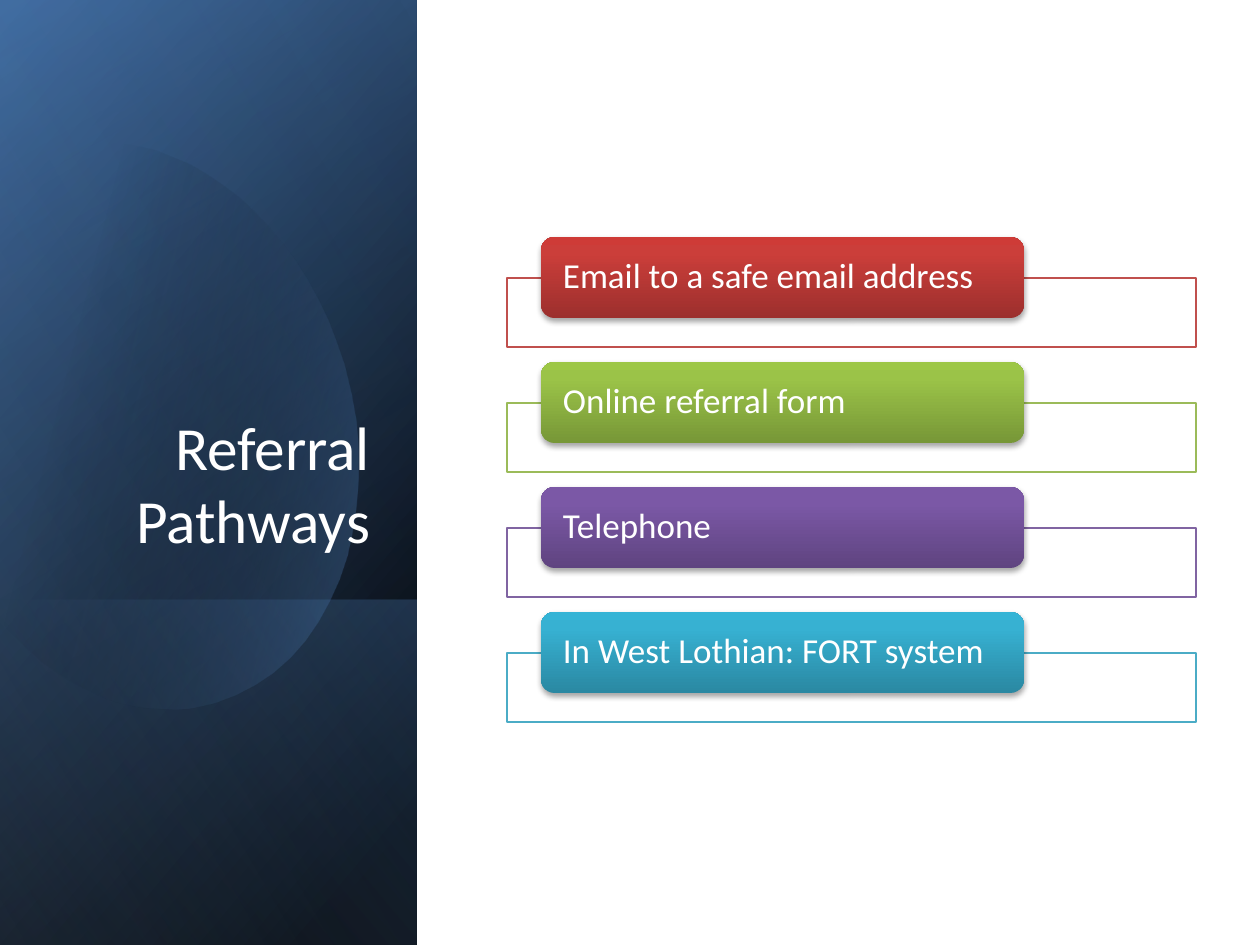
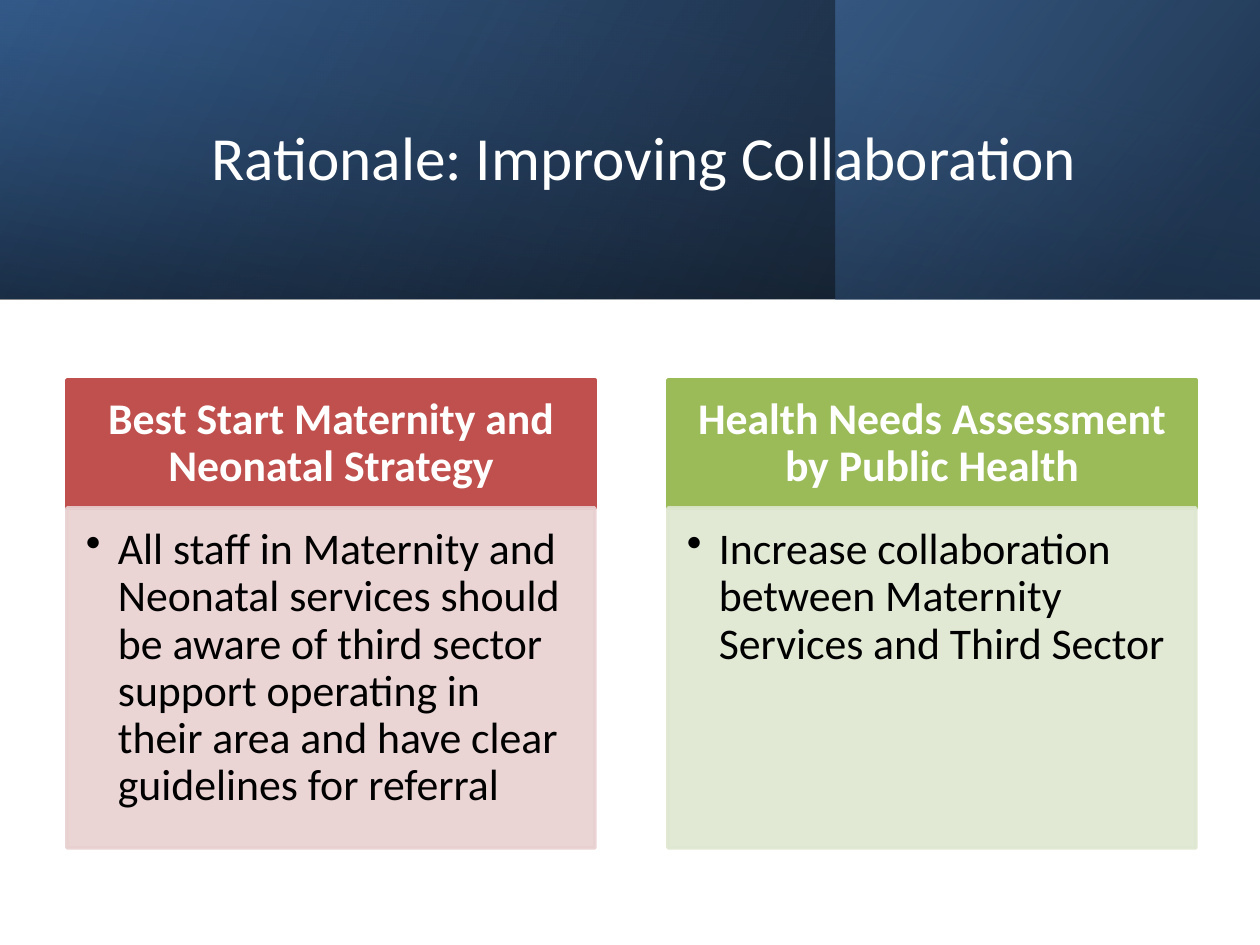
from dataclasses import dataclass

from lxml import etree
from pptx import Presentation
from pptx.dml.color import RGBColor
from pptx.enum.shapes import MSO_SHAPE
from pptx.enum.text import MSO_ANCHOR, PP_ALIGN
from pptx.oxml.ns import qn
from pptx.util import Emu, Pt

RECT, ROUNDED = MSO_SHAPE.RECTANGLE, MSO_SHAPE.ROUNDED_RECTANGLE
TOP, MIDDLE, BOTTOM = MSO_ANCHOR.TOP, MSO_ANCHOR.MIDDLE, MSO_ANCHOR.BOTTOM
LEFT, CENTER, RIGHT = PP_ALIGN.LEFT, PP_ALIGN.CENTER, PP_ALIGN.RIGHT
EMU_PER_PX = 914400 / 126
SLIDE_W, SLIDE_H = 1260, 945


@dataclass(frozen=True)
class Theme:
    font: str = "Calibri"
    title_size: int = 35
    pathway_size: int = 20
    card_size: int = 25
    white: str = "FFFFFF"
    black: str = "000000"
    blue: str = "4F81BD"
    deep_blue: str = "376092"
    navy: str = "254061"
    pale_blue: str = "95B3D7"
    red: str = "C0504D"
    green: str = "9BBB59"
    purple: str = "8064A2"
    aqua: str = "4BACC6"
    pale_red: str = "E8D0D0"
    pale_green: str = "DEE7D1"


THEME = Theme()

# Pathways: text, outline colour, button gradient from bottom to top
PATHWAYS_TITLE = "Referral Pathways"
PATHWAYS = [
    ("Email to a safe email address", THEME.red, ("9C2F2D", "CB3E3A", "CE3B37")),
    ("Online referral form", THEME.green, ("779737", "9BC348", "9DC746")),
    ("Telephone", THEME.purple, ("5F4480", "7B58A6", "7C57A8")),
    ("In West Lothian: FORT system", THEME.aqua, ("2A88A2", "37B1D2", "34B4D6")),
]

# Rationale: heading, bullet, heading colour, body colour
RATIONALE_TITLE = "Rationale: Improving Collaboration"
RATIONALES = [
    ("Best Start Maternity and Neonatal Strategy",
     "All staff in Maternity and Neonatal services should be aware of third sector "
     "support operating in their area and have clear guidelines for referral",
     THEME.red, THEME.pale_red),
    ("Health Needs Assessment by Public Health",
     "Increase collaboration between Maternity Services and Third Sector",
     THEME.green, THEME.pale_green),
]

# Bands: box as seen, turn, gradient angle, stops of (position, colour, opacity)
SIDE = (0, 0, 417, SLIDE_H)
SIDE_BANDS = [
    (SIDE, 90, 50, [(8, THEME.black, 100), (100, THEME.deep_blue, 100)]),
    (SIDE, 90, 30, [(0, THEME.black, 0), (99, THEME.blue, 46)]),
    ((0, 600, 417, 345), 90, 130, [(2, THEME.blue, 29), (100, THEME.black, 30)]),
]
SIDE_GLAZE = (SIDE, 90, 120, [(0, THEME.black, 0), (99, THEME.pale_blue, 11)])
HEADER = (0, 0, SLIDE_W, 299)
HEADER_BANDS = [
    (HEADER, 0, 330, [(0, THEME.black, 96), (100, THEME.deep_blue, 100)]),
    ((836, 0, 424, 299), 0, 320, [(19, THEME.navy, 68), (100, THEME.blue, 48)]),
    (HEADER, 270, 350, [(23, THEME.deep_blue, 16), (99, THEME.black, 45)]),
]

# Petal outline: one point is a line, three points are a Bezier curve
PETAL_START = (121, 144)
PETAL = [
    [(215, 154), (307, 242), (344, 365)],
    [(387, 519), (330, 669), (215, 702)],
    [(144, 723), (67, 693), (9, 630)],
    [(-4, 615)],
    [(-31, 209)],
    [(-19, 194)],
    [(3, 173), (28, 158), (57, 149)],
    [(78, 142), (100, 141), PETAL_START],
]
PETAL_STOPS = [(29, THEME.black, 0), (100, THEME.blue, 43)]


def px(length):
    return Emu(round(length * EMU_PER_PX))


def add_node(parent, tag, **values):
    node = etree.SubElement(parent, qn(tag))
    for name, value in values.items():
        node.set(name, str(value))
    return node


def set_all(target, values):
    for name, value in values.items():
        setattr(target, name, value)


def add_box(slide, box, kind=RECT):
    shape = slide.shapes.add_shape(kind, *map(px, box))
    shape.shadow.inherit = False
    shape.line.fill.background()
    return shape


def paint_solid(shape, fill, line, width, opacity=100, line_opacity=100):
    shape.fill.solid()
    shape.fill.fore_color.rgb = RGBColor.from_string(fill)
    shape.line.color.rgb = RGBColor.from_string(line)
    shape.line.width = Pt(width)
    props = shape._element.spPr
    for route, alpha in (("a:solidFill", opacity), ("a:ln/a:solidFill", line_opacity)):
        if alpha < 100:
            steps = "/".join(qn(step) for step in route.split("/"))
            color = props.find(steps + "/" + qn("a:srgbClr"))
            add_node(color, "a:alpha", val=alpha * 1000)


def paint_gradient(shape, angle, stops):
    shape.fill.gradient()
    gradient = shape._element.spPr.find(qn("a:gradFill"))
    for child in list(gradient):
        gradient.remove(child)
    stop_list = add_node(gradient, "a:gsLst")
    for position, color, opacity in stops:
        stop = add_node(stop_list, "a:gs", pos=position * 1000)
        shade = add_node(stop, "a:srgbClr", val=color)
        if opacity < 100:
            add_node(shade, "a:alpha", val=opacity * 1000)
    add_node(gradient, "a:lin", ang=angle * 60000, scaled=0)


def add_band(slide, seen, turn, angle, stops):
    """Add a mirrored gradient band; a quarter turn swaps its sides about the centre."""
    left, top, width, height = seen
    if turn:
        shift = (width - height) / 2
        left, top, width, height = left + shift, top - shift, height, width
    band = add_box(slide, (left, top, width, height))
    band.rotation = turn
    band._element.spPr.find(qn("a:xfrm")).set("flipH", "1")
    paint_gradient(band, angle, stops)


def add_petal(slide, steps=16):
    points, start = [], PETAL_START
    for segment in PETAL:
        if len(segment) == 1:
            points += segment
        else:
            corners = [start, *segment]
            for step in range(1, steps + 1):
                t = step / steps
                weights = ((1 - t) ** 3, 3 * t * (1 - t) ** 2, 3 * t * t * (1 - t), t ** 3)
                points.append(tuple(
                    round(sum(w * corner[axis] for w, corner in zip(weights, corners)))
                    for axis in (0, 1)))
        start = segment[-1]
    builder = slide.shapes.build_freeform(*PETAL_START, scale=EMU_PER_PX)
    builder.add_line_segments(points, close=True)
    petal = builder.convert_to_shape()
    petal.shadow.inherit = False
    petal.line.fill.background()
    paint_gradient(petal, 14, PETAL_STOPS)


def write(shape, text, size, color=THEME.white, align=LEFT, anchor=MIDDLE,
          margins=(13, 6, 13, 6), spacing=1.0, bold=False):
    frame = shape.text_frame
    sides = ("margin_left", "margin_top", "margin_right", "margin_bottom")
    set_all(frame, {"word_wrap": True, "vertical_anchor": anchor,
                    **dict(zip(sides, map(px, margins)))})
    paragraph = frame.paragraphs[0]
    set_all(paragraph, {"alignment": align, "line_spacing": spacing})
    run = paragraph.add_run()
    run.text = text
    set_all(run.font, {"name": THEME.font, "size": Pt(size), "bold": bold})
    run.font.color.rgb = RGBColor.from_string(color)
    return paragraph


def add_title(slide, text, box, align, anchor):
    title = slide.shapes.add_textbox(*map(px, box))
    write(title, text, THEME.title_size, align=align, anchor=anchor)


def add_bullet(paragraph, indent):
    props = paragraph._p.get_or_add_pPr()
    props.set("marL", str(px(indent)))
    props.set("indent", str(-px(indent)))
    add_node(props, "a:buChar", char="•")


def add_soft_shadow(shape):
    effects = shape._element.spPr.find(qn("a:effectLst"))
    shadow = add_node(effects, "a:outerShdw", blurRad=Pt(3.1), dist=Pt(1.8),
                      dir=90 * 60000, rotWithShape=0)
    add_node(add_node(shadow, "a:srgbClr", val=THEME.black), "a:alpha", val=35000)


def build_pathways(slide):
    for band in SIDE_BANDS:
        add_band(slide, *band)
    add_petal(slide)
    add_band(slide, *SIDE_GLAZE)
    add_title(slide, PATHWAYS_TITLE, (60, 232, 323, 330), RIGHT, BOTTOM)

    first_top, pitch = 237, 125
    for row, (text, outline, shades) in enumerate(PATHWAYS):
        top = first_top + row * pitch
        frame = add_box(slide, (507, top + 41, 689, 69))
        paint_solid(frame, THEME.white, outline, 0.75, opacity=90)
        button = add_box(slide, (541, top, 483, 81), ROUNDED)
        paint_gradient(button, 270, [(at, shade, 100) for at, shade in zip((0, 80, 100), shades)])
        add_soft_shadow(button)
        write(button, text, THEME.pathway_size, margins=(18, 0, 18, 0), spacing=0.9)


def build_rationale(slide):
    for band in HEADER_BANDS:
        add_band(slide, *band)
    add_title(slide, RATIONALE_TITLE, (142, 48, 1004, 217), CENTER, MIDDLE)

    first_left, pitch, width = 67, 601, 528
    top, heading_height, body_height = 380, 128, 340
    for column, (heading, bullet, color, pale) in enumerate(RATIONALES):
        left = first_left + column * pitch
        head = add_box(slide, (left, top, width, heading_height))
        paint_solid(head, color, color, 2)
        write(head, heading, THEME.card_size, align=CENTER, margins=(24, 14, 24, 14),
              spacing=0.9, bold=True)
        body = add_box(slide, (left, top + heading_height, width, body_height))
        paint_solid(body, pale, pale, 2, opacity=90, line_opacity=90)
        paragraph = write(body, bullet, THEME.card_size, THEME.black, anchor=TOP,
                          margins=(19, 19, 24, 28), spacing=0.9)
        add_bullet(paragraph, 32)


def main():
    deck = Presentation()
    set_all(deck, {"slide_width": px(SLIDE_W), "slide_height": px(SLIDE_H)})
    blank = deck.slide_layouts[6]
    for build in (build_pathways, build_rationale):
        build(deck.slides.add_slide(blank))
    deck.save("out.pptx")


if __name__ == "__main__":
    main()
